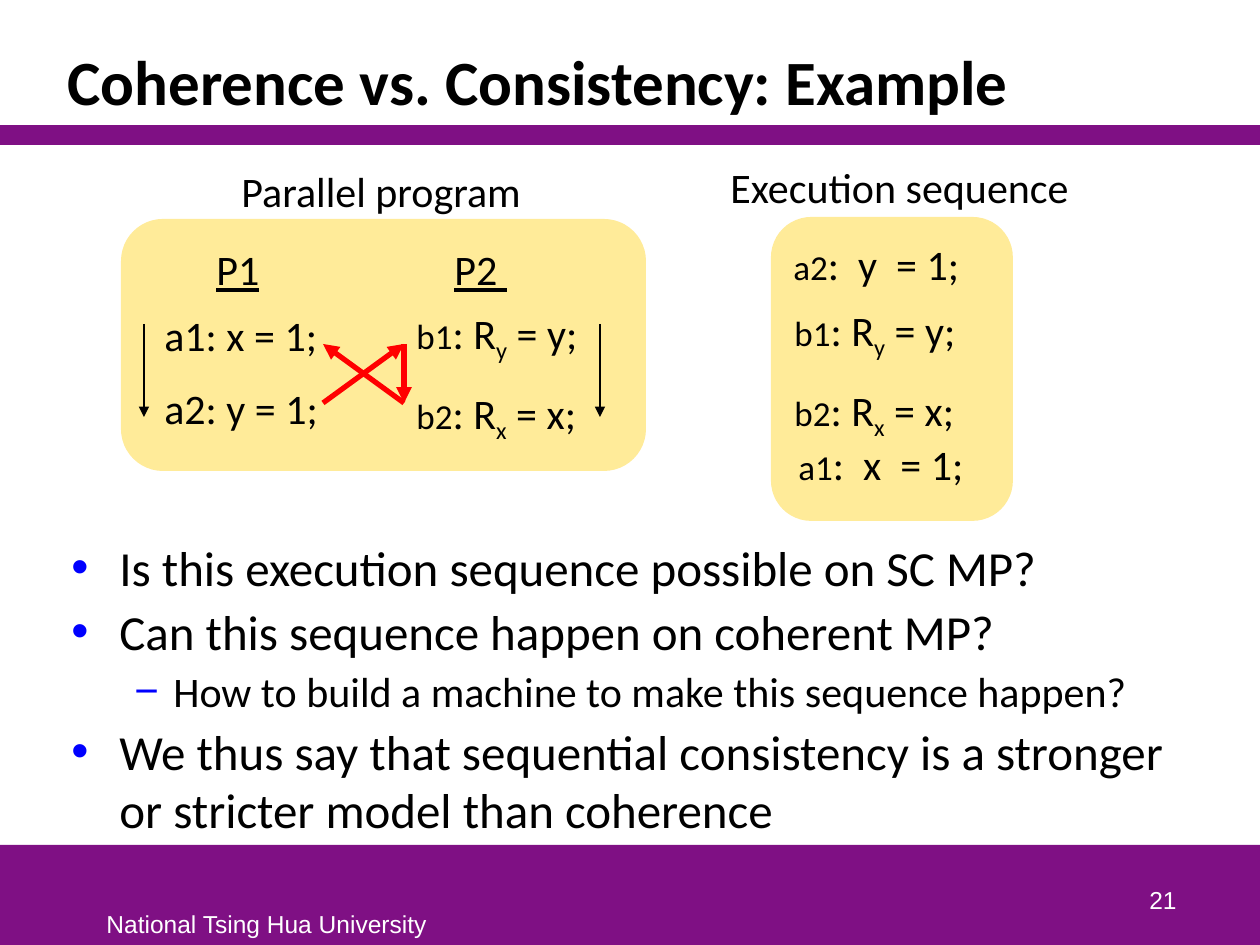
"""Build the slide that compares coherence with consistency."""
from dataclasses import dataclass

from lxml import etree
from pptx import Presentation
from pptx.dml.color import RGBColor
from pptx.enum.shapes import MSO_CONNECTOR, MSO_SHAPE
from pptx.enum.text import MSO_ANCHOR, PP_ALIGN
from pptx.oxml.ns import qn
from pptx.util import Emu, Pt

RECT, ROUNDED = MSO_SHAPE.RECTANGLE, MSO_SHAPE.ROUNDED_RECTANGLE
STRAIGHT = MSO_CONNECTOR.STRAIGHT
TOP, BOTTOM = MSO_ANCHOR.TOP, MSO_ANCHOR.BOTTOM
LEFT, RIGHT = PP_ALIGN.LEFT, PP_ALIGN.RIGHT
TITLE_ONLY = 5
PX_PER_INCH = 126


@dataclass(frozen=True)
class Theme:
    """Colours, fonts and type sizes of the slide."""
    band: str = "7F1084"
    panel: str = "FFEB99"
    ink: str = "000000"
    light: str = "FFFFFF"
    bullet: str = "0000FF"
    cross: str = "FF0000"
    font: str = "Calibri"
    footer_font: str = "Arial"
    title: int = 36
    body: int = 28
    code: int = 24
    label: int = 20
    footer: int = 14


THEME = Theme()


def px(length):
    """Turn whole pixels into EMU."""
    return Emu(round(length * 914400 / PX_PER_INCH))


def rgb(colour):
    """Turn a hex string into a colour."""
    return RGBColor.from_string(colour)


def add_panel(shapes, kind, colour, box):
    """Add a filled shape without outline."""
    panel = shapes.add_shape(kind, *map(px, box))
    panel.shadow.inherit = False
    panel.fill.solid()
    panel.fill.fore_color.rgb = rgb(colour)
    panel.line.fill.background()


def style_run(run, size=THEME.code, font=THEME.font, colour=THEME.ink):
    """Set the size, font and colour of a run."""
    run.font.size = Pt(size)
    run.font.name = font
    run.font.color.rgb = rgb(colour)


def add_text_frame(shapes, box, wrap=True, anchor=TOP):
    """Add a text box and return its frame."""
    frame = shapes.add_textbox(*map(px, box)).text_frame
    frame.word_wrap = wrap
    frame.vertical_anchor = anchor
    return frame


def add_label(shapes, text, box, wrap=False, anchor=TOP, align=LEFT, **style):
    """Add a one-line label."""
    frame = add_text_frame(shapes, box, wrap, anchor)
    frame.text = text
    line = frame.paragraphs[0]
    line.alignment = align
    style_run(line.runs[0], **style)


def write_statement(line, label, parts):
    """Write a small label, then code whose every second part is subscript."""
    name = line.add_run()
    name.text = label
    style_run(name, THEME.label)
    for index, part in enumerate(parts):
        run = line.add_run()
        run.text = part
        style_run(run)
        if index % 2:
            run.font._element.set("baseline", "-25000")


def add_statement(shapes, label, code, box):
    """Add one assignment with its label."""
    frame = add_text_frame(shapes, box)
    write_statement(frame.paragraphs[0], label, [code])


def add_reads(shapes, box):
    """Add the two register reads of the second processor."""
    frame = add_text_frame(shapes, box)
    first, second = frame.paragraphs[0], frame.add_paragraph()
    first.space_after = Pt(8)
    second.space_before = Pt(5)
    for line, label, variable in ((first, "b1", "y"), (second, "b2", "x")):
        write_statement(line, label, [": R", variable, f" = {variable};"])


def add_processor_heads(shapes, box, gap):
    """Add the underlined processor names, set apart by a tab stop."""
    line = add_text_frame(shapes, box).paragraphs[0]
    line.line_spacing = 0.8
    stops = etree.SubElement(line._p.get_or_add_pPr(), qn("a:tabLst"))
    etree.SubElement(stops, qn("a:tab"), pos=str(px(gap)), algn="l")
    for text, underlined in (("P1", True), ("\t", False), ("P2 ", True)):
        run = line.add_run()
        run.text = text
        style_run(run)
        run.font.underline = underlined


def add_arrow(shapes, start, end, colour, width):
    """Add a straight arrow that points at its end."""
    arrow = shapes.add_connector(STRAIGHT, *map(px, start + end))
    arrow.line.color.rgb = rgb(colour)
    arrow.line.width = Pt(width)
    etree.SubElement(arrow.line._get_or_add_ln(), qn("a:tailEnd"), type="triangle")
    etree.SubElement(arrow._element.spPr, qn("a:effectLst"))


def add_bullets(shapes, box, points):
    """Add the questions and the conclusion as a two-level list."""
    levels = (("•", 48, 48, THEME.body), ("−", 102, 39, THEME.code))
    frame = add_text_frame(shapes, box)
    for index, (level, text) in enumerate(points):
        mark, margin, hang, size = levels[level]
        point = frame.add_paragraph() if index else frame.paragraphs[0]
        point.text = text
        point.level = level
        if index:
            point.space_before = Pt(3)
        properties = point._p.get_or_add_pPr()
        properties.set("marL", str(px(margin)))
        properties.set("indent", str(-px(hang)))
        bullet_colour = etree.SubElement(properties, qn("a:buClr"))
        etree.SubElement(bullet_colour, qn("a:srgbClr"), val=THEME.bullet)
        etree.SubElement(properties, qn("a:buFont"), typeface=THEME.footer_font)
        etree.SubElement(properties, qn("a:buChar"), char=mark)
        style_run(point.runs[0], size)


def set_title(title, text, box):
    """Place and format the title placeholder."""
    title.left, title.top, title.width, title.height = map(px, box)
    frame = title.text_frame
    frame.text = text
    frame.vertical_anchor = BOTTOM
    line = frame.paragraphs[0]
    line.alignment = LEFT
    line.line_spacing = 0.85
    style_run(line.runs[0], THEME.title)
    line.runs[0].font.bold = True


def add_program(shapes):
    """Add the parallel program with its order and cross arrows."""
    add_label(shapes, "Parallel program", (229, 159, 307, 63))
    add_panel(shapes, ROUNDED, THEME.panel, (121, 219, 525, 252))
    add_processor_heads(shapes, (204, 247, 368, 63), 238)
    add_label(shapes, "a1: x = 1;", (152, 303, 210, 63), wrap=True)
    add_label(shapes, "a2: y = 1;", (152, 376, 199, 63), wrap=True)
    add_reads(shapes, (404, 301, 231, 137))
    write_y, read_y, read_x, write_x = (323, 403), (404, 344), (404, 403), (323, 344)
    for start, end in ((write_y, read_y), (read_y, read_x), (read_x, write_x)):
        add_arrow(shapes, start, end, THEME.cross, 3)
    for x in (144, 600):
        add_arrow(shapes, (x, 324), (x, 417), THEME.ink, 0.75)


def add_sequence(shapes):
    """Add the execution sequence as a group."""
    add_label(shapes, "Execution sequence", (718, 155, 368, 63))
    sequence = shapes.add_group_shape().shapes
    add_panel(sequence, ROUNDED, THEME.panel, (771, 217, 242, 304))
    add_statement(sequence, "a2", ":  y  = 1;", (781, 232, 231, 64))
    add_reads(sequence, (782, 298, 231, 137))
    add_statement(sequence, "a1", ":  x  = 1;", (786, 432, 231, 64))


def main():
    """Build and save the slide."""
    deck = Presentation()
    deck.slide_width, deck.slide_height = px(1260), px(945)
    slide = deck.slides.add_slide(deck.slide_layouts[TITLE_ONLY])
    shapes = slide.shapes
    for band in ((0, 845, 1260, 100), (0, 125, 1260, 20)):
        add_panel(shapes, RECT, THEME.band, band)
    footer = {"size": THEME.footer, "font": THEME.footer_font, "colour": THEME.light}
    add_label(shapes, "National Tsing Hua University", (94, 903, 348, 42), **footer)
    add_label(shapes, "21", (927, 858, 262, 63), True, BOTTOM, RIGHT, **footer)
    set_title(shapes.title, "Coherence vs. Consistency: Example", (55, 32, 1130, 93))
    add_program(shapes)
    add_sequence(shapes)
    add_bullets(shapes, (59, 531, 1126, 308), (
        (0, "Is this execution sequence possible on SC MP?"),
        (0, "Can this sequence happen on coherent MP?"),
        (1, "How to build a machine to make this sequence happen?"),
        (0, "We thus say that sequential consistency is a stronger "
            "or stricter model than coherence"),
    ))
    deck.save("out.pptx")


if __name__ == "__main__":
    main()
